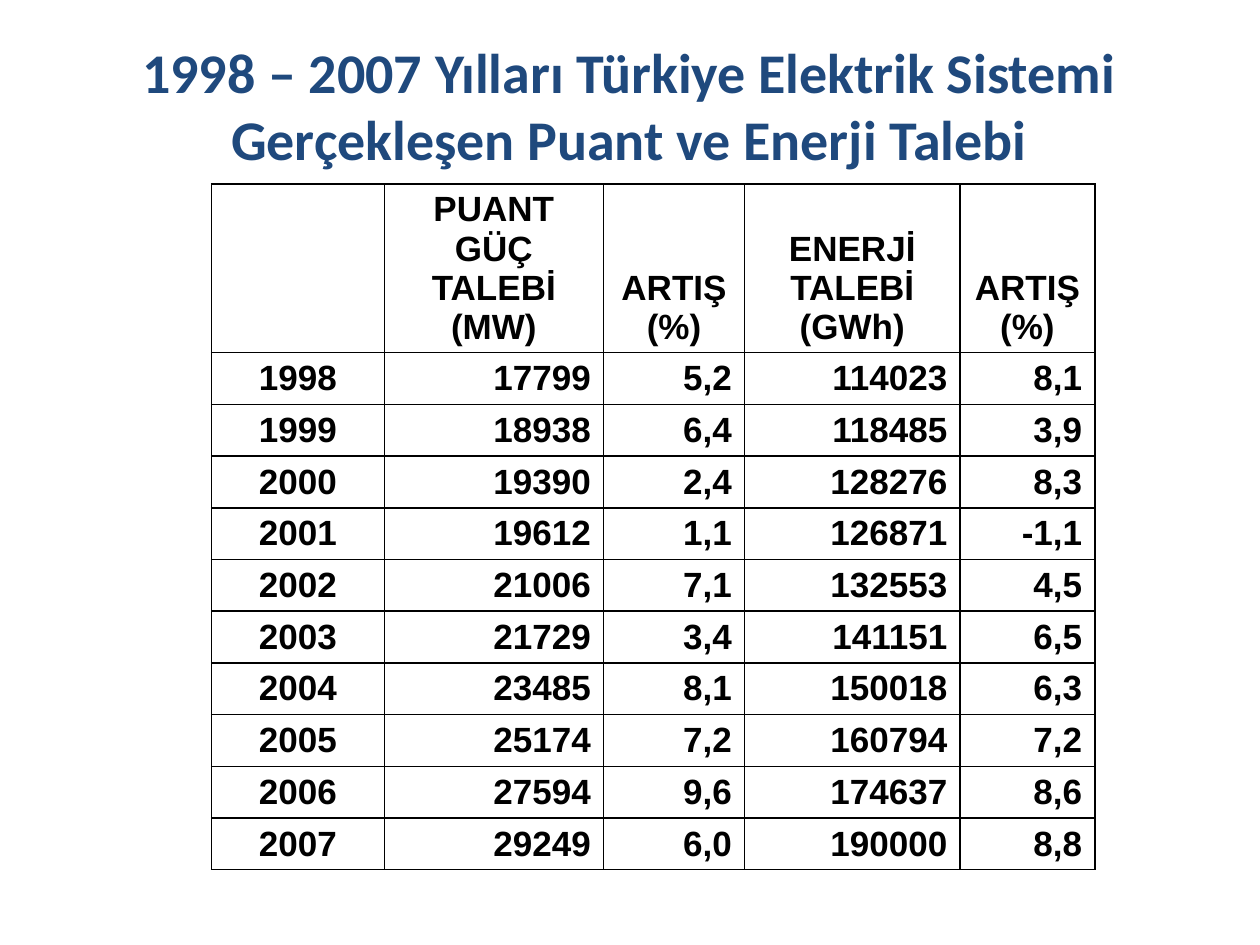
from lxml import etree
from pptx import Presentation
from pptx.dml.color import RGBColor
from pptx.enum import text
from pptx.oxml import ns
from pptx.util import Inches, Pt

# Content
TITLE = "1998 – 2007 Yılları Türkiye Elektrik Sistemi Gerçekleşen Puant ve Enerji Talebi"
HEADER = ("", "PUANT GÜÇ TALEBİ (MW)", "ARTIŞ (%)", "ENERJİ TALEBİ (GWh)", "ARTIŞ (%)")
DEMAND = [
    ("1998", "17799", "5,2", "114023", "8,1"),
    ("1999", "18938", "6,4", "118485", "3,9"),
    ("2000", "19390", "2,4", "128276", "8,3"),
    ("2001", "19612", "1,1", "126871", "-1,1"),
    ("2002", "21006", "7,1", "132553", "4,5"),
    ("2003", "21729", "3,4", "141151", "6,5"),
    ("2004", "23485", "8,1", "150018", "6,3"),
    ("2005", "25174", "7,2", "160794", "7,2"),
    ("2006", "27594", "9,6", "174637", "8,6"),
    ("2007", "29249", "6,0", "190000", "8,8"),
]
COLUMN_WIDTHS = (1.37, 1.74, 1.12, 1.71, 1.07)
HEADER_HEIGHT, ROW_HEIGHT = 1.34, 0.41
BLACK, NAVY = "000000", "1F497D"
CENTER, RIGHT = text.PP_ALIGN.CENTER, text.PP_ALIGN.RIGHT


def color(value):
    return RGBColor.from_string(value)


def write(frame, words, size=20, font="Arial", fill=BLACK, align=CENTER):
    paragraph = frame.paragraphs[0]
    paragraph.alignment = align
    paragraph.font.size = Pt(size)
    if not words:
        return
    run = paragraph.add_run()
    run.text = words
    run.font.size = Pt(size)
    run.font.name = font
    run.font.bold = True
    run.font.color.rgb = color(fill)


def add_borders(cell, fill=BLACK, width=1):
    properties = cell._tc.get_or_add_tcPr()
    for position, side in enumerate(("lnL", "lnR", "lnT", "lnB")):
        line = etree.Element(ns.qn(f"a:{side}"), w=str(Pt(width)))
        solid = etree.SubElement(line, ns.qn("a:solidFill"))
        etree.SubElement(solid, ns.qn("a:srgbClr"), val=fill)
        properties.insert(position, line)


def add_title(slide):
    title = slide.shapes.title
    title.left, title.top = Inches(0.35), Inches(0.28)
    title.width, title.height = Inches(9.29), Inches(1.1)
    frame = title.text_frame
    frame.word_wrap = True
    frame.auto_size = text.MSO_AUTO_SIZE.NONE
    frame.vertical_anchor = text.MSO_ANCHOR.MIDDLE
    write(frame, TITLE, size=32, font="Calibri", fill=NAVY)


def add_demand_table(slide):
    rows = [HEADER, *DEMAND]
    heights = [HEADER_HEIGHT] + [ROW_HEIGHT] * len(DEMAND)
    table = slide.shapes.add_table(
        len(rows), len(HEADER), Inches(1.68), Inches(1.46),
        Inches(sum(COLUMN_WIDTHS)), Inches(sum(heights))).table
    table.first_row = table.horz_banding = False
    for column, width in zip(table.columns, COLUMN_WIDTHS):
        column.width = Inches(width)
    for row, height in zip(table.rows, heights):
        row.height = Inches(height)

    # Header and years are centred, figures are right-aligned
    for r, values in enumerate(rows):
        for c, value in enumerate(values):
            cell = table.cell(r, c)
            cell.fill.background()
            cell.vertical_anchor = text.MSO_ANCHOR.BOTTOM
            write(cell.text_frame, value, align=RIGHT if r and c else CENTER)
            add_borders(cell)


def main():
    presentation = Presentation()
    presentation.slide_width, presentation.slide_height = Inches(10), Inches(7.5)
    slide = presentation.slides.add_slide(presentation.slide_layouts[5])
    add_title(slide)
    add_demand_table(slide)
    presentation.save("out.pptx")


if __name__ == "__main__":
    main()
